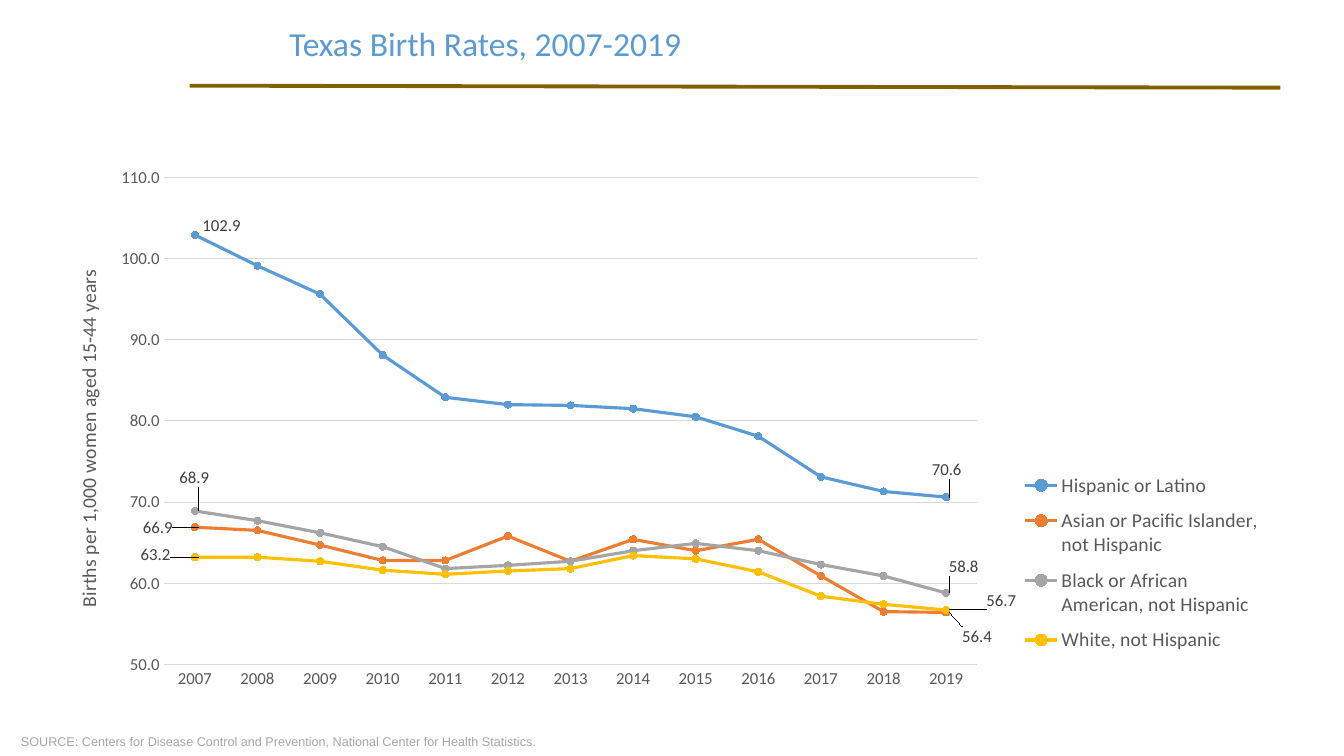
from lxml import etree
from pptx import Presentation
from pptx import util as u
from pptx.chart.data import CategoryChartData
from pptx.dml.color import RGBColor
from pptx.enum import chart as charts, shapes, text
from pptx.oxml import parse_xml
from pptx.oxml.ns import qn

CHART_NS = "http://schemas.openxmlformats.org/drawingml/2006/chart"
EXT_NS = "http://schemas.microsoft.com/office/drawing/2012/chart"


def style(font, size, color, name="Calibri"):
    font.size = u.Pt(size)
    font.name = name
    font.bold = False
    font.color.rgb = RGBColor.from_string(color)


def manual_layout(modes="", **values):
    layout = etree.Element(qn("c:layout"))
    manual = etree.SubElement(layout, qn("c:manualLayout"))
    if modes == "inner":
        etree.SubElement(manual, qn("c:layoutTarget"), val="inner")
    if modes:
        for mode in ("xMode", "yMode"):
            etree.SubElement(manual, qn("c:" + mode), val="edge")
    for key, value in values.items():
        etree.SubElement(manual, qn("c:" + key), val=str(value))
    return layout


deck = Presentation()
deck.slide_width = u.Inches(13.33)
deck.slide_height = u.Inches(7.5)
page = deck.slides.add_slide(deck.slide_layouts[5])

rule = page.shapes.add_connector(
    shapes.MSO_CONNECTOR.STRAIGHT,
    u.Inches(1.88), u.Inches(0.85), u.Inches(12.7), u.Inches(0.87))
rule.line.color.rgb = RGBColor.from_string("806000")
rule.line.width = u.Pt(2.75)
etree.SubElement(rule._element.spPr, qn("a:effectLst"))

rates = [
    ("Hispanic or Latino", "5B9BD5",
     [102.9, 99.1, 95.6, 88.1, 82.9, 82.0, 81.9, 81.5, 80.5, 78.1, 73.1, 71.3, 70.6],
     [(0, -0.017), (-0.018, -0.05)]),
    ("Asian or Pacific Islander, not Hispanic", "ED7D31",
     [66.9, 66.5, 64.7, 62.8, 62.8, 65.8, 62.7, 65.4, 64.0, 65.4, 60.9, 56.5, 56.4],
     [(-0.049, 0), (0.007, 0.044)]),
    ("Black or African American, not Hispanic", "A5A5A5",
     [68.9, 67.7, 66.2, 64.5, 61.8, 62.2, 62.7, 64.0, 64.9, 64.0, 62.3, 60.9, 58.8],
     [(-0.019, -0.062), (-0.004, -0.048)]),
    ("White, not Hispanic", "FFC000",
     [63.2, 63.2, 62.7, 61.6, 61.1, 61.5, 61.8, 63.4, 63.0, 61.4, 58.4, 57.4, 56.7],
     [(-0.051, -0.004), (0.027, -0.018)]),
]
data = CategoryChartData(number_format="0.0")
data.categories = [str(year) for year in range(2007, 2020)]
for name, color, values, offsets in rates:
    data.add_series(name, values)
chart = page.shapes.add_chart(
    charts.XL_CHART_TYPE.LINE_MARKERS, u.Inches(0.54), u.Inches(1.56),
    u.Inches(12.03), u.Inches(5.4), data).chart
style(chart.font, 10, "000000")
chart.has_title = False
plot = chart.plots[0]
plot.vary_by_categories = False

plot_area = chart._chartSpace.find(".//" + qn("c:plotArea"))
for layout in plot_area.findall(qn("c:layout")):
    plot_area.remove(layout)
plot_area.insert(0, manual_layout("inner", x=0.09, y=0.037, w=0.671, h=0.895))

for series, (name, color, values, offsets) in zip(plot.series, rates):
    series.smooth = False
    series.format.line.color.rgb = RGBColor.from_string(color)
    series.format.line.width = u.Pt(2.25)
    series.marker.style = charts.XL_MARKER_STYLE.CIRCLE
    series.marker.size = 5
    series.marker.format.fill.solid()
    series.marker.format.fill.fore_color.rgb = RGBColor.from_string(color)
    series.marker.format.line.color.rgb = RGBColor.from_string(color)
    series.data_labels.show_value = False
    for index, (dx, dy) in zip((0, len(values) - 1), offsets):
        label = series.points[index].data_label
        style(label.font, 12, "404040")
        label.position = charts.XL_LABEL_POSITION.RIGHT
        mark = series._element.findall(".//" + qn("c:dLbl"))[-1]
        mark.insert(1, manual_layout(x=dx, y=dy))
    series.data_labels._element.append(parse_xml(
        f'<c:extLst xmlns:c="{CHART_NS}" xmlns:c15="{EXT_NS}">'
        '<c:ext uri="{CE6537A1-D6FC-4f65-9D91-7224C49458BB}">'
        '<c15:showLeaderLines val="1"/></c:ext></c:extLst>'))

years = chart.category_axis
births = chart.value_axis
for axis in (years, births):
    style(axis.tick_labels.font, 12, "595959")
    axis.major_tick_mark = charts.XL_TICK_MARK.NONE
    axis.minor_tick_mark = charts.XL_TICK_MARK.NONE
births.minimum_scale = 50
births.maximum_scale = 110
births.major_unit = 10
births.tick_labels.number_format = "0.0"
births.tick_labels.number_format_is_linked = False
births.format.line.fill.background()
births.has_major_gridlines = True
for line in (years.format.line, births.major_gridlines.format.line):
    line.color.rgb = RGBColor.from_string("D9D9D9")
    line.width = u.Pt(0.75)

caption = births.axis_title
caption.text_frame.text = "Births per 1,000 women aged 15-44 years"
style(caption.text_frame.paragraphs[0].font, 14, "595959")
caption.text_frame._txBody.bodyPr.set("rot", "-5400000")
caption.text_frame._txBody.bodyPr.set("vert", "horz")
for layout in caption._element.findall(qn("c:layout")):
    caption._element.remove(layout)
caption._element.find(qn("c:tx")).addnext(manual_layout("edge", x=0.014, y=0.2))

chart.has_legend = True
legend = chart.legend
legend.position = charts.XL_LEGEND_POSITION.RIGHT
legend.include_in_layout = False
style(legend.font, 14, "595959")
for layout in legend._element.findall(qn("c:layout")):
    legend._element.remove(layout)
legend._element.find(qn("c:legendPos")).addnext(
    manual_layout("edge", x=0.8, y=0.56, w=0.2, h=0.37))

source = page.shapes.add_textbox(
    u.Inches(0.11), u.Inches(7.23), u.Inches(6.67), u.Inches(0.25))
source.text_frame.word_wrap = True
para = source.text_frame.paragraphs[0]
para.text = ("SOURCE: Centers for Disease Control and Prevention, "
             "National Center for Health Statistics.")
para.space_after = u.Pt(2)
style(para.font, 9, "A6A6A6", "Arial")

title = page.shapes.title
title.left, title.top = u.Inches(2.77), u.Inches(0.33)
title.width, title.height = u.Inches(6.67), u.Inches(0.39)
title.text_frame.text = "Texas Birth Rates, 2007-2019"
title.text_frame.vertical_anchor = text.MSO_ANCHOR.TOP
title.text_frame.auto_size = text.MSO_AUTO_SIZE.NONE
para = title.text_frame.paragraphs[0]
para.alignment = text.PP_ALIGN.LEFT
para.line_spacing = u.Pt(18)
style(para.font, 24, "5B9BD5")

deck.save("out.pptx")
